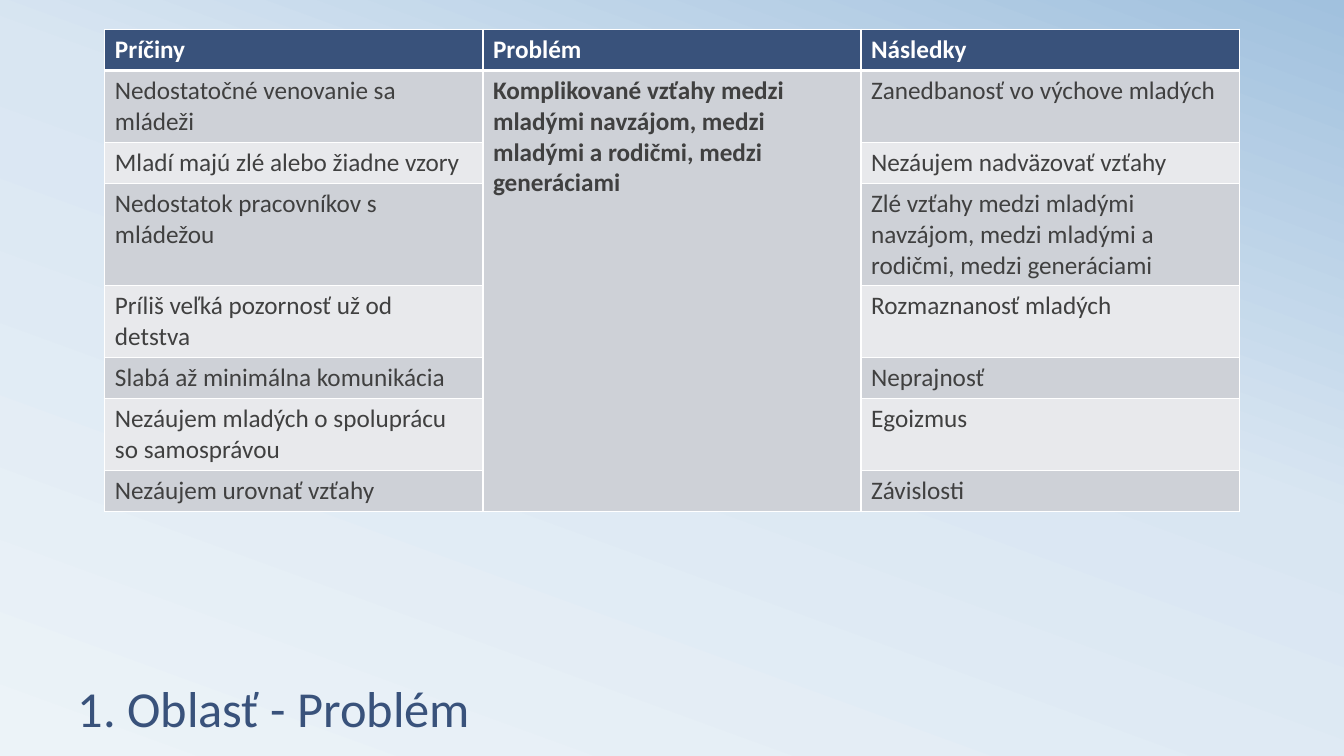
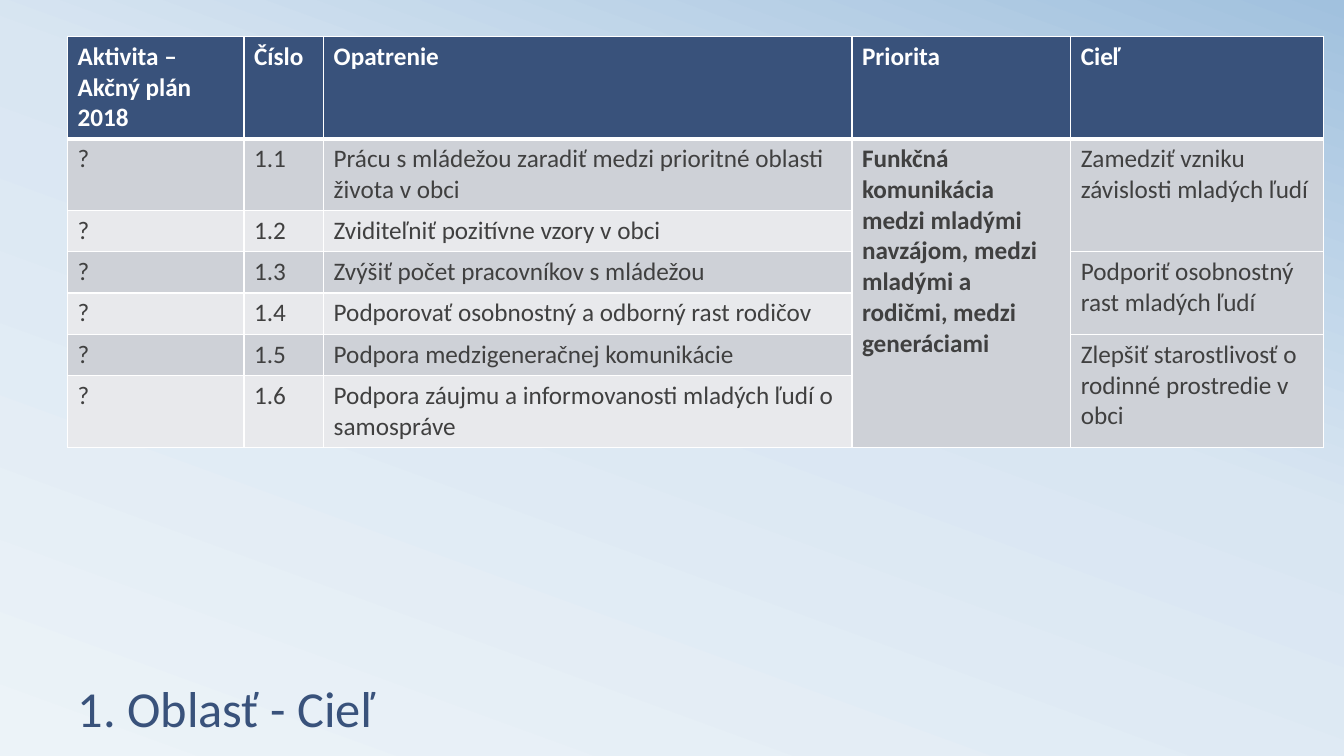
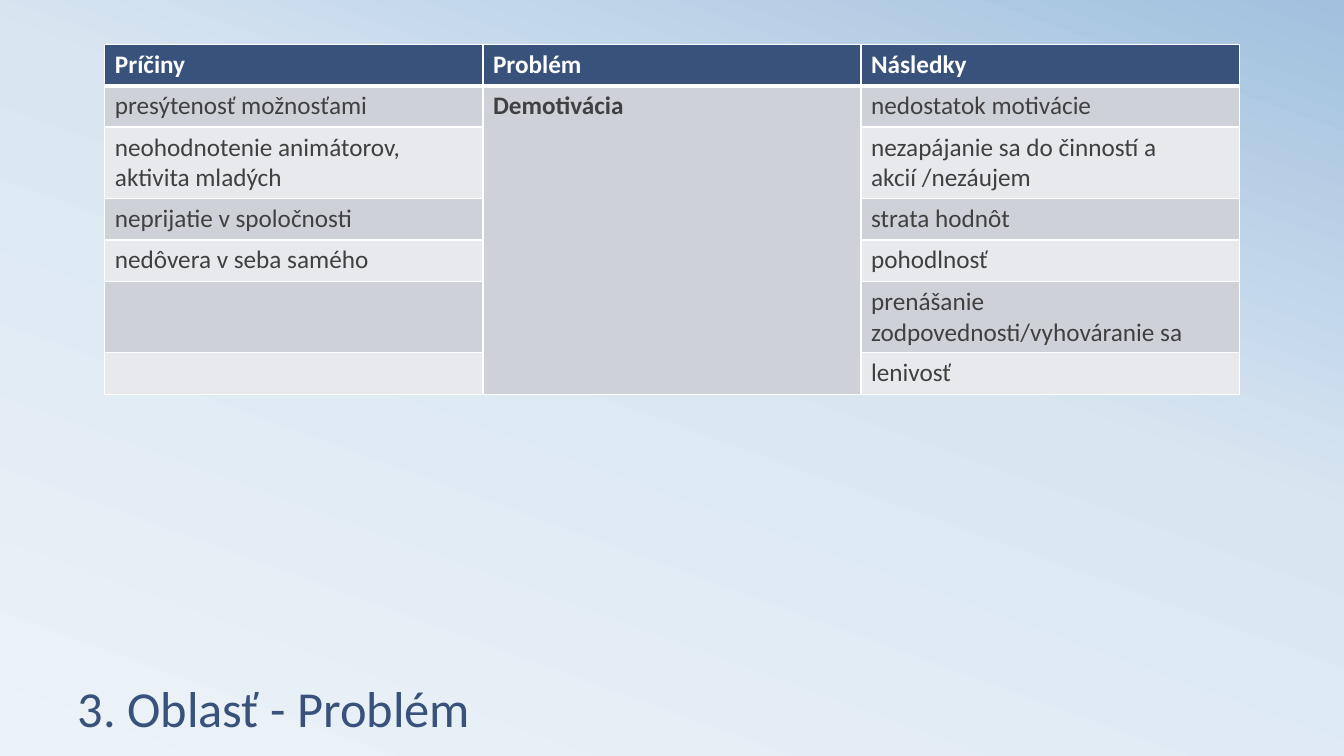
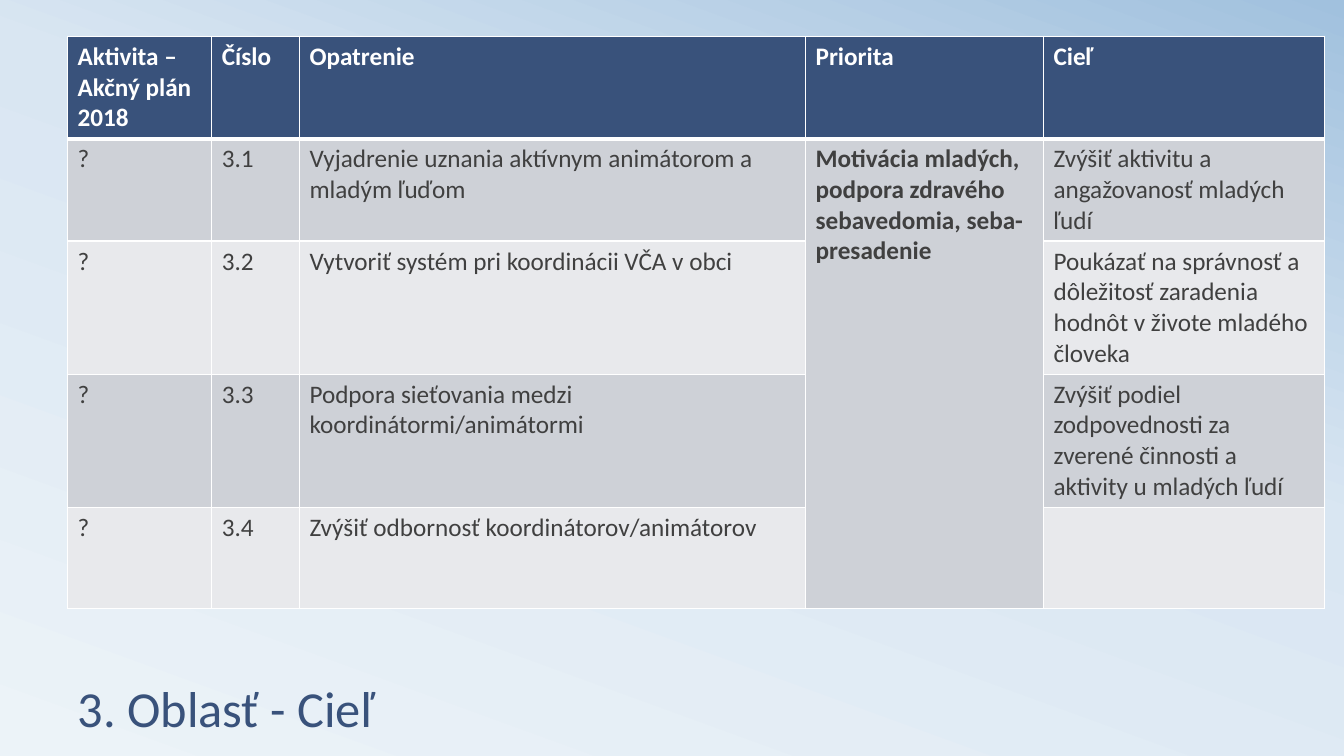
import copy
from dataclasses import dataclass

import pptx
import pptx.dml.color
import pptx.enum.text
import pptx.oxml
import pptx.oxml.ns
import pptx.presentation
import pptx.slide
import pptx.table
import pptx.text.text
import pptx.util

Inches = pptx.util.Inches
Pt = pptx.util.Pt


@dataclass(frozen=True)
class Theme:
    font: str = "Calibri"
    navy: str = "39527B"
    ink: str = "404040"
    white: str = "FFFFFF"
    bands: tuple[str, ...] = ("E8E9EC", "CED1D7")
    sky: tuple[tuple[float, str], ...] = ((0, "ECF3F8"), (0.58, "D9E6F2"), (1, "A1C1DE"))
    angle: float = 70
    title: float = 36
    body: float = 18
    thin: float = 1
    thick: float = 3
    row: float = 0.41


THEME = Theme()
WIDE, HIGH = 13.33, 7.5
MARGIN = 0.67
TITLE_BOX = (MARGIN, 6.19, 12, 1.17)

CAUSES = ("Príčiny", "Problém", "Následky")
GOALS = ("Aktivita – Akčný plán 2018", "Číslo", "Opatrenie", "Priorita", "Cieľ")


@dataclass(frozen=True)
class Page:
    """A slide with one table; None in a row extends the cell above it."""
    title: str
    left: float
    top: float
    cols: tuple[float, ...]
    head: tuple[str, ...]
    rows: tuple[tuple[str | None, ...], ...]
    key: int
    tall: tuple[tuple[int, float], ...] = ()


PAGES = (
    Page("1. Oblasť - Problém", 1.04, 0.29, (3.75,) * 3, CAUSES, (
        ("Nedostatočné venovanie sa mládeži",
         "Komplikované vzťahy medzi mladými navzájom, medzi mladými a rodičmi, medzi generáciami",
         "Zanedbanosť vo výchove mladých"),
        ("Mladí majú zlé alebo žiadne vzory", None, "Nezáujem nadväzovať vzťahy"),
        ("Nedostatok pracovníkov s mládežou", None,
         "Zlé vzťahy medzi mladými navzájom, medzi mladými a rodičmi, medzi generáciami"),
        ("Príliš veľká pozornosť už od detstva", None, "Rozmaznanosť mladých"),
        ("Slabá až minimálna komunikácia", None, "Neprajnosť"),
        ("Nezáujem mladých o spoluprácu so samosprávou", None, "Egoizmus"),
        ("Nezáujem urovnať vzťahy", None, "Závislosti"),
    ), key=1),
    Page("1. Oblasť - Cieľ", MARGIN, 0.36, (1.75, 0.79, 5.24, 2.17, 2.51), GOALS, (
        ("?", "1.1", "Prácu s mládežou zaradiť medzi prioritné oblasti života v obci",
         "Funkčná komunikácia medzi mladými navzájom, medzi mladými a rodičmi, medzi generáciami",
         "Zamedziť vzniku závislosti mladých ľudí"),
        ("?", "1.2", "Zviditeľniť pozitívne vzory v obci", None, None),
        ("?", "1.3", "Zvýšiť počet pracovníkov s mládežou", None,
         "Podporiť osobnostný rast mladých ľudí"),
        ("?", "1.4", "Podporovať osobnostný a odborný rast rodičov", None, None),
        ("?", "1.5", "Podpora medzigeneračnej komunikácie", None,
         "Zlepšiť starostlivosť o rodinné prostredie v obci"),
        ("?", "1.6", "Podpora záujmu a informovanosti mladých ľudí o samospráve", None, None),
    ), key=3),
    Page("3. Oblasť - Problém", 1.04, 0.44, (3.75,) * 3, CAUSES, (
        ("presýtenosť možnosťami", "Demotivácia", "nedostatok motivácie"),
        ("neohodnotenie animátorov, aktivita mladých", None,
         "nezapájanie sa do činností a akcií /nezáujem"),
        ("neprijatie v spoločnosti", None, "strata hodnôt"),
        ("nedôvera v seba samého", None, "pohodlnosť"),
        ("", None, "prenášanie zodpovednosti/vyhováranie sa"),
        ("", None, "lenivosť"),
    ), key=1),
    Page("3. Oblasť - Cieľ", MARGIN, 0.36, (1.43, 0.87, 5.02, 2.36, 2.79), GOALS, (
        ("?", "3.1", "Vyjadrenie uznania aktívnym animátorom a mladým ľuďom",
         "Motivácia mladých, podpora zdravého sebavedomia, seba-presadenie",
         "Zvýšiť aktivitu a angažovanosť mladých ľudí"),
        ("?", "3.2", "Vytvoriť systém pri koordinácii VČA v obci", None,
         "Poukázať na správnosť a dôležitosť zaradenia hodnôt v živote mladého človeka"),
        ("?", "3.3", "Podpora sieťovania medzi koordinátormi/animátormi", None,
         "Zvýšiť podiel zodpovednosti za zverené činnosti a aktivity u mladých ľudí"),
        ("?", "3.4", "Zvýšiť odbornosť koordinátorov/animátorov", None, ""),
    ), key=3, tall=((3, 1), (4, 1))),
)


def rgb(code: str) -> pptx.dml.color.RGBColor:
    return pptx.dml.color.RGBColor.from_string(code)


def paint_sky(deck: pptx.presentation.Presentation) -> None:
    master = deck.slide_master
    fill = master.background.fill
    fill.gradient()
    fill.gradient_angle = THEME.angle
    stops = next(master.element.iter(pptx.oxml.ns.qn("a:gsLst")))
    while len(stops) < len(THEME.sky):
        stops.append(copy.deepcopy(stops[0]))
    for stop, (place, code) in zip(fill.gradient_stops, THEME.sky):
        stop.position = place
        stop.color.rgb = rgb(code)


def add_run(para: pptx.text.text._Paragraph, text: str, size: float,
            code: str, bold: bool = False) -> None:
    run = para.add_run()
    run.text = text
    font = run.font
    font.name, font.size, font.bold = THEME.font, Pt(size), bold
    font.color.rgb = rgb(code)


def add_title(slide: pptx.slide.Slide, text: str) -> None:
    title = slide.shapes.title
    title.left, title.top, title.width, title.height = map(Inches, TITLE_BOX)
    frame = title.text_frame
    frame.auto_size = pptx.enum.text.MSO_AUTO_SIZE.NONE
    frame.vertical_anchor = pptx.enum.text.MSO_ANCHOR.BOTTOM
    para = frame.paragraphs[0]
    para.alignment = pptx.enum.text.PP_ALIGN.LEFT
    para.line_spacing = 0.8
    add_run(para, text, THEME.title, THEME.navy)


def add_edges(cell: pptx.table._Cell, row: int) -> None:
    """Rule all four sides, thicker between the heading and the first row."""
    thick = {0: "B", 1: "T"}.get(row)
    props = cell._tc.get_or_add_tcPr()
    for side in "LRTB":
        width = Pt(THEME.thick if side == thick else THEME.thin)
        props.append(pptx.oxml.parse_xml(
            f'<a:ln{side} {pptx.oxml.ns.nsdecls("a")} w="{width}"><a:solidFill>'
            f'<a:srgbClr val="{THEME.white}"/></a:solidFill></a:ln{side}>'))


def add_grid(slide: pptx.slide.Slide, page: Page) -> None:
    lines = (page.head, *page.rows)
    tall = dict(page.tall)
    highs = [tall.get(row, THEME.row) for row in range(len(lines))]
    box = map(Inches, (page.left, page.top, sum(page.cols), sum(highs)))
    table = slide.shapes.add_table(len(lines), len(page.cols), *box).table
    table.horz_banding = False
    for col, width in zip(table.columns, page.cols):
        col.width = Inches(width)
    for line, high in zip(table.rows, highs):
        line.height = Inches(high)
    for row, line in enumerate(lines):
        for col, text in enumerate(line):
            cell = table.cell(row, col)
            add_edges(cell, row)
            cell.fill.solid()
            cell.fill.fore_color.rgb = rgb(THEME.bands[row % 2] if row else THEME.navy)
            if text:
                add_run(cell.text_frame.paragraphs[0], text, THEME.body,
                        THEME.ink if row else THEME.white, not row or col == page.key)
    for col in range(len(page.cols)):
        starts = [row for row, line in enumerate(lines) if line[col] is not None]
        for start, end in zip(starts, starts[1:] + [len(lines)]):
            if end - start > 1:
                table.cell(start, col).merge(table.cell(end - 1, col))


def main() -> None:
    deck = pptx.Presentation()
    deck.slide_width, deck.slide_height = Inches(WIDE), Inches(HIGH)
    paint_sky(deck)
    layout = deck.slide_layouts.get_by_name("Title Only")
    for page in PAGES:
        slide = deck.slides.add_slide(layout)
        add_title(slide, page.title)
        add_grid(slide, page)
    deck.save("out.pptx")


if __name__ == "__main__":
    main()
